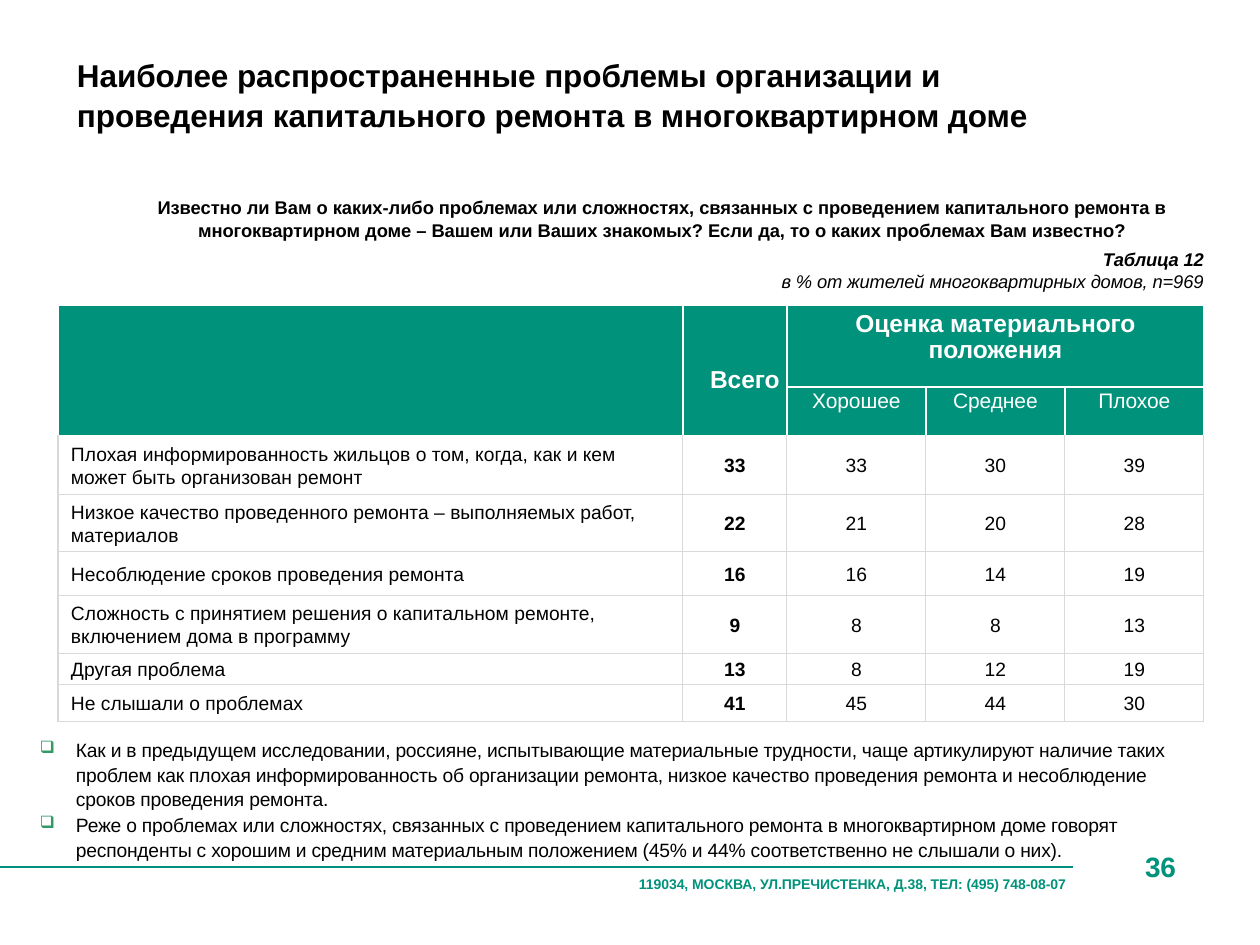
from dataclasses import dataclass, field

from lxml.etree import SubElement
from pptx import Presentation
from pptx.dml.color import RGBColor
from pptx.enum.shapes import MSO_CONNECTOR as Connector
from pptx.enum.text import MSO_ANCHOR as Anchor, PP_ALIGN as Align
from pptx.oxml import parse_xml
from pptx.oxml.ns import nsdecls, qn
from pptx.util import Pt

PX = 914400 // 126
FONT = "Arial"
GREEN, BULLET_GREEN = "00927A", "339966"
BLACK, WHITE, GREY = "000000", "FFFFFF", "D9D9D9"


@dataclass
class Line:
    """One paragraph; margin and indent are in px, spacing in hundredths of a point."""
    text: str
    size: float
    color: str = BLACK
    bold: bool = False
    italic: bool = False
    spacing: int = -5
    margin: int = 0
    indent: int = 0
    bullet: str = ""
    layout: dict = field(default_factory=dict)


@dataclass
class TextBlock:
    left: int
    top: int
    width: int
    height: int
    lines: list[Line]
    inset_top: int = 1


@dataclass
class CellStyle:
    border: str
    border_width: float
    fill: str | None = None
    anchor: Anchor = Anchor.MIDDLE
    insets: tuple[int, int, int, int] = (0, 0, 0, 0)


def color(value: str) -> RGBColor:
    return RGBColor.from_string(value)


def set_all(target, values: dict) -> None:
    for name, value in values.items():
        setattr(target, name, value)


def add_bullet(properties, character: str) -> None:
    bullet_color = SubElement(properties, qn("a:buClr"))
    SubElement(bullet_color, qn("a:srgbClr"), val=BULLET_GREEN)
    SubElement(properties, qn("a:buSzPct"), val="88000")
    SubElement(properties, qn("a:buChar"), char=character)


def write_lines(frame, lines: list[Line]) -> None:
    for index, line in enumerate(lines):
        paragraph = frame.add_paragraph() if index else frame.paragraphs[0]
        set_all(paragraph, line.layout)
        properties = paragraph._p.get_or_add_pPr()
        properties.set("marL", str(line.margin * PX))
        properties.set("indent", str(line.indent * PX))
        if line.bullet:
            add_bullet(properties, line.bullet)
        run = paragraph.add_run()
        run.text = line.text
        set_all(run.font, {"name": FONT, "size": Pt(line.size),
                           "bold": line.bold, "italic": line.italic})
        run.font.color.rgb = color(line.color)
        run._r.get_or_add_rPr().set("spc", str(line.spacing))


def add_text(slide, block: TextBlock) -> None:
    box = slide.shapes.add_textbox(block.left * PX, block.top * PX,
                                   block.width * PX, block.height * PX)
    set_all(box.text_frame, {"word_wrap": True, "margin_left": 0, "margin_right": 0,
                             "margin_top": block.inset_top * PX, "margin_bottom": 0})
    write_lines(box.text_frame, block.lines)


def style_cell(cell, style: CellStyle) -> None:
    left, top, right, bottom = (inset * PX for inset in style.insets)
    set_all(cell, {"margin_left": left, "margin_top": top, "margin_right": right,
                   "margin_bottom": bottom, "vertical_anchor": style.anchor})
    if style.fill:
        cell.fill.solid()
        cell.fill.fore_color.rgb = color(style.fill)
    else:
        cell.fill.background()
    properties = cell._tc.get_or_add_tcPr()
    for position, side in enumerate("LRTB"):
        properties.insert(position, parse_xml(
            f'<a:ln{side} {nsdecls("a")} w="{Pt(style.border_width)}"><a:solidFill>'
            f'<a:srgbClr val="{style.border}"/></a:solidFill></a:ln{side}>'))


def add_footer_rule(slide, right: int, y: int) -> None:
    rule = slide.shapes.add_connector(Connector.STRAIGHT, 0, y * PX, right * PX, y * PX)
    rule.line.color.rgb = color("00907C")
    rule.line.width = Pt(1.2)
    SubElement(rule._element.spPr, qn("a:effectLst"))


CENTER = {"alignment": Align.CENTER}
RIGHT = {"alignment": Align.RIGHT}
QUESTION = CENTER | {"line_spacing": 1.04}
BULLET_LAYOUT = {"line_spacing": 1.06}

HEADER = CellStyle(WHITE, 1, GREEN)
TOTAL_HEADER = CellStyle(WHITE, 1, GREEN, insets=(0, 20, 0, 0))
GROUP_HEADER = CellStyle(WHITE, 1, GREEN, Anchor.TOP, (20, 6, 20, 0))
SUB_HEADER = CellStyle(WHITE, 1, GREEN, Anchor.TOP, (0, 1, 0, 0))
LABEL = CellStyle(GREY, 0.75, insets=(0, 0, 20, 0))
VALUE = CellStyle(GREY, 0.75, insets=(1, 1, 1, 0))

COLUMN_WIDTHS = [625, 104, 139, 139, 139]
ROW_HEIGHTS = [82, 49, 59, 57, 44, 58, 31, 37]
RATINGS = ["Хорошее", "Среднее", "Плохое"]
PROBLEMS = [
    ("Плохая информированность жильцов о том, когда, как и кем может быть организован ремонт",
     33, 33, 30, 39),
    ("Низкое качество проведенного ремонта – выполняемых работ, материалов", 22, 21, 20, 28),
    ("Несоблюдение сроков проведения ремонта", 16, 16, 14, 19),
    ("Сложность с принятием решения о капитальном ремонте, включением дома в программу",
     9, 8, 8, 13),
    ("Другая проблема", 13, 8, 12, 19),
    ("Не слышали о проблемах", 41, 45, 44, 30),
]
FINDINGS = [
    "Как и в предыдущем исследовании, россияне, испытывающие материальные трудности, чаще "
    "артикулируют наличие таких проблем как плохая информированность об организации ремонта, "
    "низкое качество проведения ремонта и несоблюдение сроков проведения ремонта.",
    "Реже о проблемах или сложностях, связанных с проведением капитального ремонта в "
    "многоквартирном доме говорят респонденты с хорошим и средним материальным положением "
    "(45% и 44% соответственно не слышали о них).",
]
TEXT_BLOCKS = [
    TextBlock(76, 54, 964, 78, [
        Line("Наиболее распространенные проблемы организации и проведения капитального "
             "ремонта в многоквартирном доме", 18, bold=True, margin=1,
             layout={"line_spacing": 1.04})]),
    TextBlock(121, 194, 1083, 97, [
        Line("Известно ли Вам о каких-либо проблемах или сложностях, связанных с проведением "
             "капитального ремонта в", 10.5, bold=True, spacing=0, layout=QUESTION),
        Line("многоквартирном доме – Вашем или Ваших знакомых? Если да, то о каких проблемах "
             "Вам известно?", 10.5, bold=True, spacing=0, layout=QUESTION),
        Line("Таблица 12", 10.5, bold=True, italic=True,
             layout=RIGHT | {"space_before": Pt(4)}),
        Line("в % от жителей многоквартирных домов, n=969", 10.5, italic=True, layout=RIGHT)]),
    TextBlock(37, 736, 1168, 120, [
        Line(text, 11, spacing=-15, margin=39, indent=-36, bullet="❑",
             layout=BULLET_LAYOUT | ({"space_before": Pt(1)} if index else {}))
        for index, text in enumerate(FINDINGS)]),
    TextBlock(1140, 851, 42, 35, [
        Line("36", 16, GREEN, bold=True, margin=5, layout={"line_spacing": Pt(18.6)})], 0),
    TextBlock(638, 876, 438, 19, [
        Line("119034, МОСКВА, УЛ.ПРЕЧИСТЕНКА, Д.38, ТЕЛ: (495) 748-08-07", 8, GREEN,
             bold=True, margin=1)], 0),
]


def add_problem_table(slide, left: int, top: int) -> None:
    table = slide.shapes.add_table(
        len(ROW_HEIGHTS), len(COLUMN_WIDTHS), left * PX, top * PX,
        sum(COLUMN_WIDTHS) * PX, sum(ROW_HEIGHTS) * PX).table
    set_all(table, {"first_row": False, "horz_banding": False})
    for column, width in zip(table.columns, COLUMN_WIDTHS):
        column.width = width * PX
    for row, height in zip(table.rows, ROW_HEIGHTS):
        row.height = height * PX

    for column, style in enumerate([HEADER, TOTAL_HEADER] + [GROUP_HEADER] * 3):
        style_cell(table.cell(0, column), style)
        style_cell(table.cell(1, column), style if column < 2 else SUB_HEADER)
    for column in (0, 1):
        table.cell(0, column).merge(table.cell(1, column))
    table.cell(0, 2).merge(table.cell(0, 4))
    write_lines(table.cell(0, 1).text_frame,
                [Line("Всего", 14, WHITE, bold=True, margin=20, layout=CENTER)])
    write_lines(table.cell(0, 2).text_frame,
                [Line("Оценка материального положения", 14, WHITE, bold=True,
                      layout=CENTER | {"line_spacing": 0.96})])
    for column, rating in enumerate(RATINGS, 2):
        write_lines(table.cell(1, column).text_frame,
                    [Line(rating, 12, WHITE, layout=CENTER | {"line_spacing": Pt(14.3)})])

    for row, (label, *values) in enumerate(PROBLEMS, 2):
        style_cell(table.cell(row, 0), LABEL)
        write_lines(table.cell(row, 0).text_frame,
                    [Line(label, 11, spacing=0, margin=13,
                          layout={"line_spacing": Pt(13.2)})])
        for column, value in enumerate(values, 1):
            style_cell(table.cell(row, column), VALUE)
            write_lines(table.cell(row, column).text_frame,
                        [Line(str(value), 11, bold=column == 1, spacing=0, layout=CENTER)])


def main() -> None:
    presentation = Presentation()
    set_all(presentation, {"slide_width": 1260 * PX, "slide_height": 945 * PX})
    slide = presentation.slides.add_slide(presentation.slide_layouts[6])
    add_footer_rule(slide, 1073, 867)
    add_problem_table(slide, 58, 305)
    for block in TEXT_BLOCKS:
        add_text(slide, block)
    presentation.save("out.pptx")


if __name__ == "__main__":
    main()
